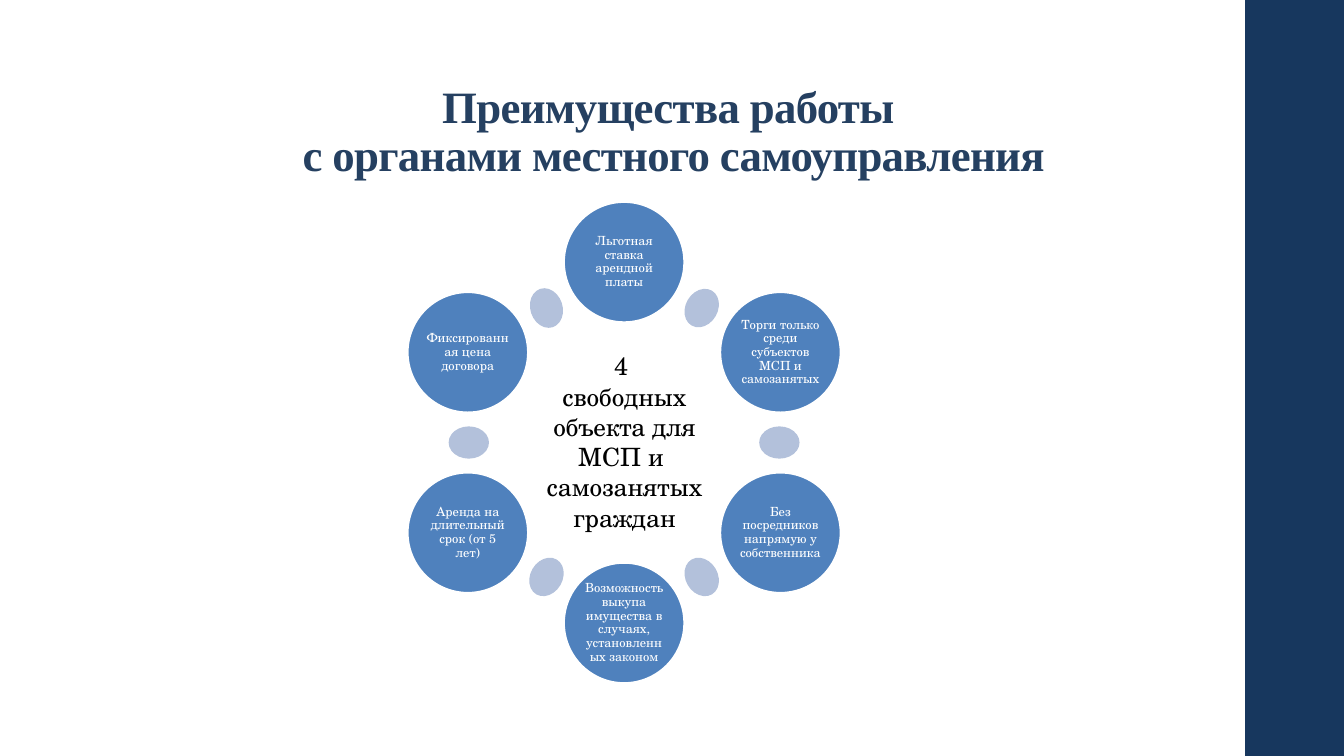
import math
from dataclasses import dataclass

from pptx import Presentation
from pptx.dml.color import RGBColor
from pptx.enum.shapes import MSO_SHAPE
from pptx.enum.text import MSO_ANCHOR, MSO_AUTO_SIZE, PP_ALIGN
from pptx.shapes.autoshape import Shape
from pptx.slide import Slide
from pptx.text.text import TextFrame
from pptx.util import Inches, Pt

RECT, ELLIPSE = MSO_SHAPE.RECTANGLE, MSO_SHAPE.OVAL
MIDDLE, BOTTOM = MSO_ANCHOR.MIDDLE, MSO_ANCHOR.BOTTOM
CENTER = PP_ALIGN.CENTER
NO_FIT = MSO_AUTO_SIZE.NONE


@dataclass(frozen=True)
class Theme:
    side_bar: str = "17375E"
    title: str = "254061"
    circle: str = "4F81BD"
    link: str = "B3C1DB"
    light: str = "FFFFFF"
    dark: str = "000000"
    title_font: str = "Times New Roman"
    body_font: str = "TeX Gyre Schola"
    title_size: float = 32
    center_size: float = 18
    circle_size: float = 9


@dataclass(frozen=True)
class Benefit:
    text: str
    angle: float  # clockwise from the top, degrees
    link_turn: float  # rotation of the link that follows


THEME = Theme()
RING_X, RING_Y = 6.19, 4.39
CIRCLE_RADIUS, LINK_RADIUS = 1.79, 1.54
CIRCLE_SIZE = 1.19
LINK_WIDTH, LINK_HEIGHT = 0.32, 0.4

BENEFITS = [
    Benefit("Льготная ставка арендной платы", 0, 30),
    Benefit("Торги только среди субъектов МСП и самозанятых", 60, 90),
    Benefit("Без посредников напрямую у собственника", 120, 150),
    Benefit("Возможность выкупа имущества в случаях, установленных законом", 180, 210),
    Benefit("Аренда на длительный срок (от 5 лет)", 240, 270),
    Benefit("Фиксированная цена договора", 300, 341.9),
]


def write(frame: TextFrame, *paragraphs: str, size: float, color: str,
          font: str = THEME.body_font, bold: bool = False, line_spacing: float = 1.0,
          anchor: MSO_ANCHOR = MSO_ANCHOR.TOP, inset: float | None = None,
          tracking: float = 0) -> None:
    """Fill a frame with centred paragraphs; a vertical tab breaks a line."""
    frame.word_wrap = True
    frame.auto_size = NO_FIT
    frame.vertical_anchor = anchor
    if inset is not None:
        frame.margin_left = frame.margin_right = Inches(inset)
        frame.margin_top = frame.margin_bottom = Inches(inset)
    for index, text in enumerate(paragraphs):
        paragraph = frame.paragraphs[0] if index == 0 else frame.add_paragraph()
        paragraph.text = text
        paragraph.alignment = CENTER
        paragraph.line_spacing = line_spacing
        for run in paragraph.runs:
            run.font.name = font
            run.font.size = Pt(size)
            run.font.bold = bold
            run.font.color.rgb = RGBColor.from_string(color)
            if tracking:
                run.font._element.set("spc", str(round(tracking * 100)))


def add_filled(slide: Slide, kind: MSO_SHAPE, left: float, top: float, width: float,
               height: float, fill: str, outline: str | None = None) -> Shape:
    shape = slide.shapes.add_shape(kind, Inches(left), Inches(top),
                                   Inches(width), Inches(height))
    shape.shadow.inherit = False
    shape.fill.solid()
    shape.fill.fore_color.rgb = RGBColor.from_string(fill)
    if outline:
        shape.line.color.rgb = RGBColor.from_string(outline)
        shape.line.width = Pt(1.1)
    else:
        shape.line.fill.background()
    return shape


def add_on_ring(slide: Slide, angle: float, radius: float, width: float, height: float,
                fill: str, outline: str | None = None) -> Shape:
    x = RING_X + radius * math.sin(math.radians(angle))
    y = RING_Y - radius * math.cos(math.radians(angle))
    return add_filled(slide, ELLIPSE, x - width / 2, y - height / 2,
                      width, height, fill, outline)


def add_benefit(slide: Slide, benefit: Benefit) -> None:
    circle = add_on_ring(slide, benefit.angle, CIRCLE_RADIUS, CIRCLE_SIZE, CIRCLE_SIZE,
                         THEME.circle, THEME.light)
    write(circle.text_frame, benefit.text, size=THEME.circle_size, color=THEME.light,
          line_spacing=0.9, anchor=MIDDLE, inset=0.01)
    link = add_on_ring(slide, benefit.angle + 30, LINK_RADIUS, LINK_WIDTH, LINK_HEIGHT,
                       THEME.link)
    link.rotation = benefit.link_turn


def main() -> None:
    deck = Presentation()
    deck.slide_width, deck.slide_height = Inches(13.33), Inches(7.5)
    slide = deck.slides.add_slide(deck.slide_layouts.get_by_name("Title Only"))

    # Side bar
    add_filled(slide, RECT, 12.35, 0, 0.98, 7.5, THEME.side_bar)

    # Title
    title = slide.shapes.title
    title.left, title.top = Inches(1.38), Inches(0.4)
    title.width, title.height = Inches(10.6), Inches(1.45)
    write(title.text_frame, "Преимущества работы \vс органами местного самоуправления",
          size=THEME.title_size, color=THEME.title, font=THEME.title_font, bold=True,
          line_spacing=0.9, anchor=BOTTOM, tracking=-0.5)

    # Ring of benefits
    for benefit in BENEFITS:
        add_benefit(slide, benefit)

    # Message in the middle of the ring
    message = slide.shapes.add_textbox(Inches(5.21), Inches(3.43), Inches(1.97), Inches(1.92))
    write(message.text_frame, "4 ", "свободных объекта для МСП и ", "самозанятых граждан",
          size=THEME.center_size, color=THEME.dark)

    deck.save("out.pptx")


if __name__ == "__main__":
    main()
